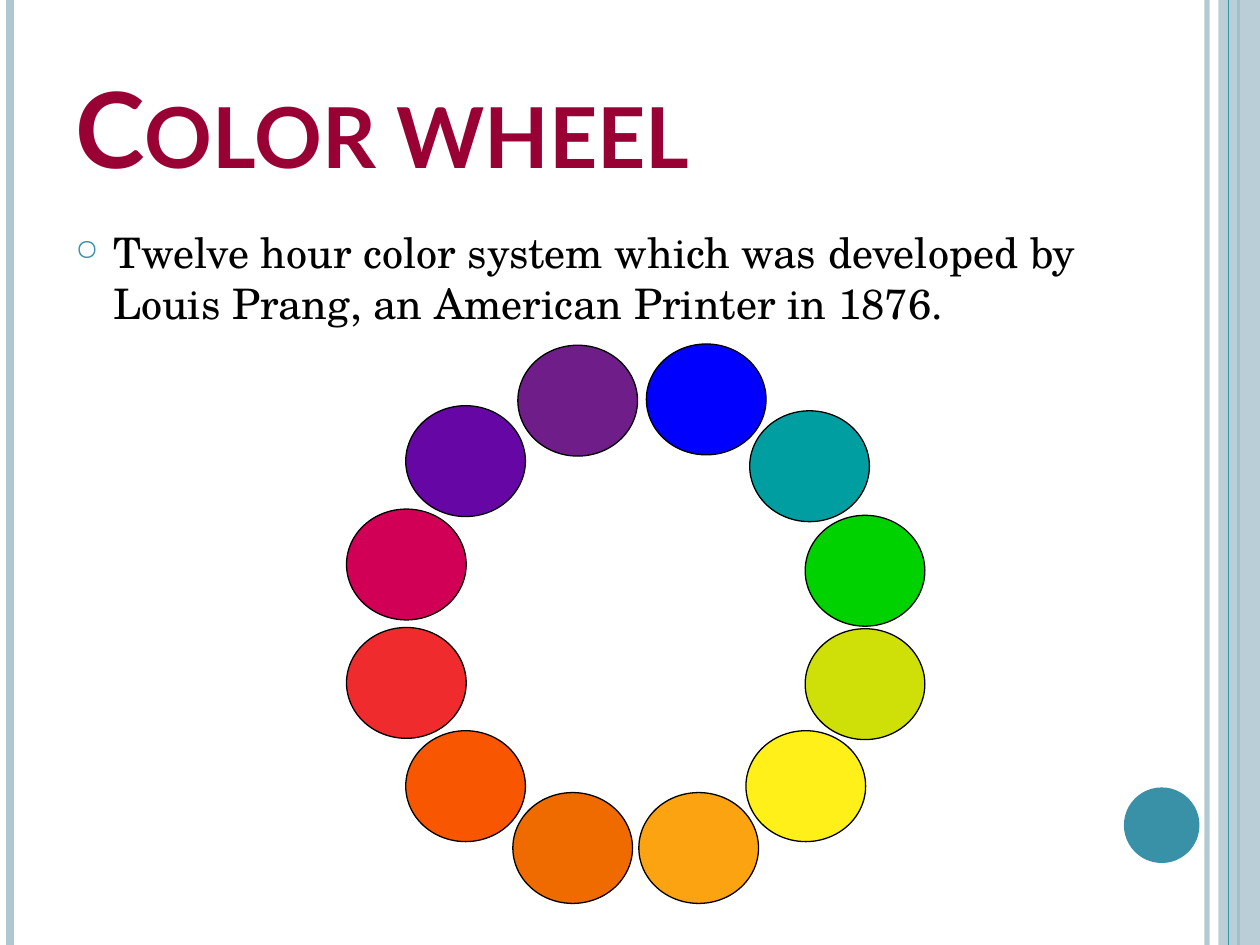
"""Builds a slide with a twelve-colour wheel inside a striped frame."""
from lxml.etree import SubElement
from pptx import Presentation
from pptx.dml.color import RGBColor
from pptx.enum.shapes import MSO_CONNECTOR, MSO_SHAPE
from pptx.enum.text import MSO_ANCHOR
from pptx.oxml.ns import qn
from pptx.util import Inches, Pt

COLORS = {
    "pale": "AFC7D0", "teal": "3891A7", "title": "990033", "text": "000000",
    "purple": "6F1D89", "blue": "0000FF", "blue green": "009EA0",
    "green": "00D200", "yellow green": "CEE007", "yellow": "FFF019",
    "violet": "6607A5", "red violet": "D10056", "red": "EF2B2D",
    "red orange": "F95602", "orange": "EF6B00", "yellow orange": "FCA311",
}
RGB = {name: RGBColor.from_string(value) for name, value in COLORS.items()}

prs = Presentation()
prs.slide_width, prs.slide_height = Inches(10), Inches(7.5)
col, row = prs.slide_width / 100, prs.slide_height / 100
s = prs.slides.add_slide(prs.slide_layouts[6])


def add_filled(kind, x, y, w, h, color):
    sp = s.shapes.add_shape(kind, int(x * col), int(y * row), int(w * col), int(h * row))
    sp.shadow.inherit = False
    sp.fill.solid()
    sp.fill.fore_color.rgb = RGB[color]
    sp.line.fill.background()
    return sp


def add_stripe(x, color, width):
    cx = s.shapes.add_connector(MSO_CONNECTOR.STRAIGHT, int(x * col), 0, int(x * col), prs.slide_height)
    cx.line.color.rgb = RGB[color]
    cx.line.width = Pt(width)
    SubElement(cx._element.spPr, qn("a:effectLst"))
    return cx


cx = add_stripe(95.8, "pale", 3)
add_stripe(0.8, "pale", 4.5)
add_stripe(98.3, "teal", 1.5)
band = add_filled(MSO_SHAPE.RECTANGLE, 96.7, 0, 3.3, 100, "pale")
for sp, alpha in ((cx, 93), (band, 87)):
    clr = next(sp._element.spPr.iter(qn("a:srgbClr")))
    SubElement(clr, qn("a:alpha"), val=str(alpha * 1000))
add_stripe(97.5, "teal", 0.75)
add_filled(MSO_SHAPE.OVAL, 89.2, 83.33, 6, 8, "teal")

texts = [
    ("Color wheel", 4, 16.67, MSO_ANCHOR.BOTTOM, "Lato", 60, "title"),
    ("Twelve hour color system which was developed by Louis Prang, an American Printer in 1876.",
     23.33, 71.07, MSO_ANCHOR.TOP, "TeX Gyre Schola", 24, "text"),
]
for text, y, h, anchor, font, size, color in texts:
    tb = s.shapes.add_textbox(int(5 * col), int(y * row), int(81.7 * col), int(h * row))
    tf = tb.text_frame
    tf.word_wrap = True
    tf.vertical_anchor = anchor
    tf.text = text
    p = tf.paragraphs[0]
    r = p.runs[0]
    r.font.name, r.font.size = font, Pt(size)
    r.font.color.rgb = RGB[color]
    if color == "title":
        r.font.bold = True
        r._r.get_or_add_rPr().set("cap", "small")
    else:
        p.space_before = Pt(6)
        pPr = p._p.get_or_add_pPr()
        pPr.set("marL", str(Inches(0.3)))
        pPr.set("indent", str(-Inches(0.3)))
        SubElement(SubElement(pPr, qn("a:buClr")), qn("a:srgbClr"), val=COLORS["teal"])
        SubElement(pPr, qn("a:buSzPct"), val="70000")
        SubElement(pPr, qn("a:buChar"), char="○")

wheel = [
    ("purple", 41.1, 36.53), ("blue", 51.3, 36.4), ("blue green", 59.5, 43.47),
    ("green", 63.9, 54.53), ("yellow green", 63.9, 66.53), ("yellow", 59.2, 77.33),
    ("violet", 32.2, 42.93), ("red violet", 27.5, 53.87), ("red", 27.5, 66.4),
    ("red orange", 32.2, 77.33), ("orange", 40.7, 83.87), ("yellow orange", 50.7, 83.87),
]
for color, x, y in wheel:
    sp = add_filled(MSO_SHAPE.OVAL, x, y, 9.5, 11.73, color)
    sp.line.color.rgb = RGB["text"]
    sp.line.width = Pt(0.75)

prs.save("out.pptx")
